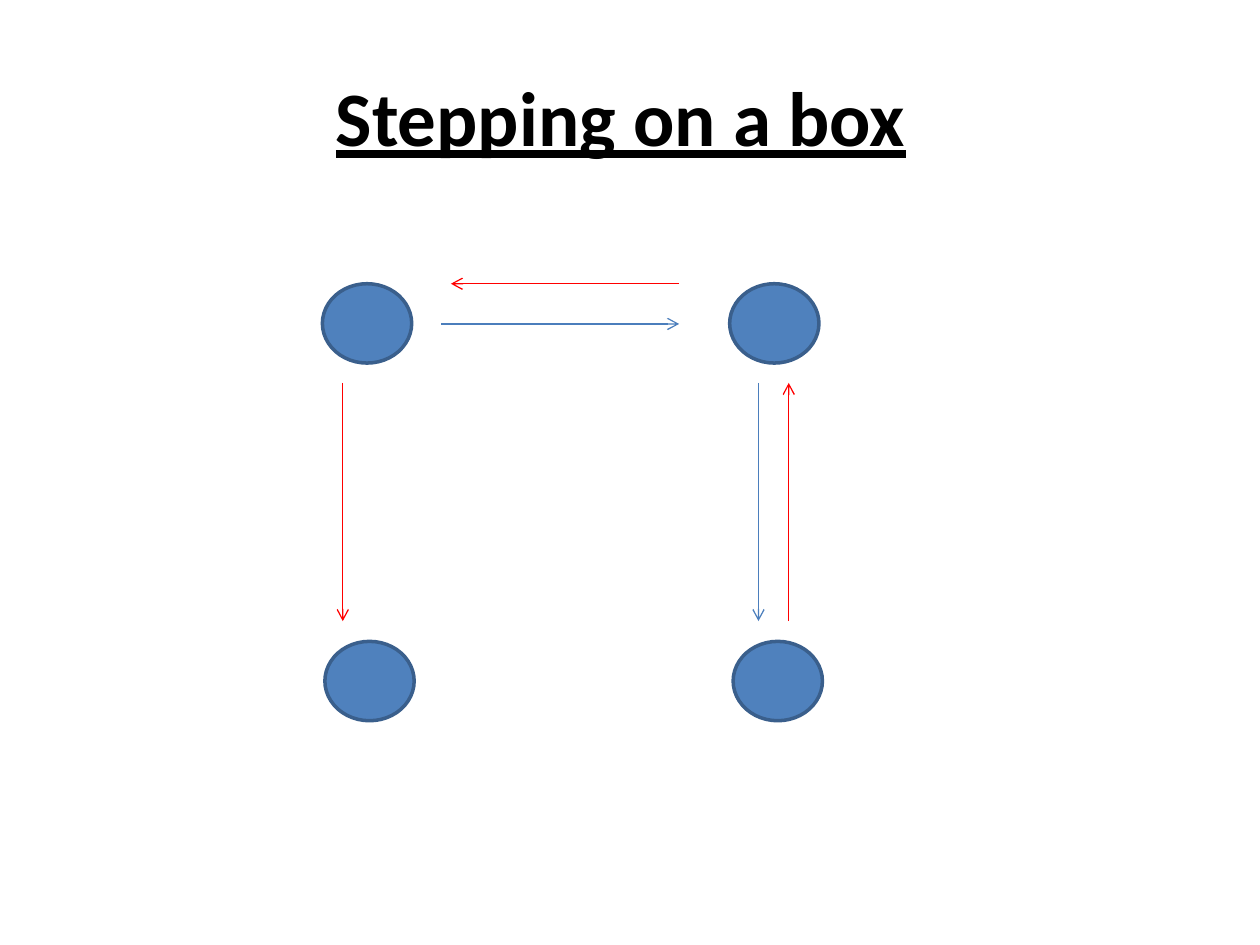
from lxml.etree import SubElement
from pptx import Presentation
from pptx.dml.color import RGBColor
from pptx.enum.shapes import MSO_CONNECTOR, MSO_SHAPE
from pptx.enum.text import MSO_ANCHOR, PP_ALIGN
from pptx.oxml.ns import qn
from pptx.util import Cm, Pt

TITLE = "Stepping on a box"
BLUE, RED = "4B7EBC", "FF0000"
FILL, OUTLINE = "4F81BD", "3A5F8C"

# All lengths are in centimetres.
FOOT_SIZE = (1.8, 1.6)
FEET = [(6.5, 5.72), (14.71, 5.72), (6.55, 12.93), (14.78, 12.93)]

TOP, BOTTOM = 7.72, 12.52  # ends of the vertical arrows
RIGHT = 13.69  # right end of the horizontal arrows
STEPS = [  # start, end, colour
    ((8.89, 6.53), (RIGHT, 6.53), BLUE),
    ((15.29, TOP), (15.29, BOTTOM), BLUE),
    ((15.9, BOTTOM), (15.9, TOP), RED),
    ((RIGHT, 5.72), (9.09, 5.72), RED),
    ((6.91, TOP), (6.91, BOTTOM), RED),
]


def rgb(value):
    return RGBColor.from_string(value)


def add_title(s, text):
    tf = s.shapes.add_textbox(Cm(1.09), Cm(0.74), Cm(22.86), Cm(3.18)).text_frame
    tf.word_wrap = True
    tf.vertical_anchor = MSO_ANCHOR.MIDDLE
    p = tf.paragraphs[0]
    p.text = text
    p.alignment = PP_ALIGN.CENTER
    font = p.font
    font.name, font.size = "Calibri", Pt(44)
    font.bold = font.underline = True
    font.color.rgb = rgb("000000")


def add_foot(s, position):
    sp = s.shapes.add_shape(MSO_SHAPE.OVAL, *map(Cm, position + FOOT_SIZE))
    sp.shadow.inherit = False
    sp.fill.solid()
    sp.fill.fore_color.rgb = rgb(FILL)
    sp.line.color.rgb = rgb(OUTLINE)
    sp.line.width = Pt(2)


def add_step(s, start, end, color):
    arrow = s.shapes.add_connector(MSO_CONNECTOR.STRAIGHT, *map(Cm, start + end))
    arrow.line.color.rgb = rgb(color)
    arrow.line.width = Pt(0.75)
    SubElement(arrow.line._get_or_add_ln(), qn("a:tailEnd"), type="arrow")
    SubElement(arrow._element.spPr, qn("a:effectLst"))


def main():
    prs = Presentation()
    prs.slide_width, prs.slide_height = Cm(25.4), Cm(19.05)
    s = prs.slides.add_slide(prs.slide_layouts[6])
    add_title(s, TITLE)
    for position in FEET:
        add_foot(s, position)
    for start, end, color in STEPS:
        add_step(s, start, end, color)
    prs.save("out.pptx")


if __name__ == "__main__":
    main()
